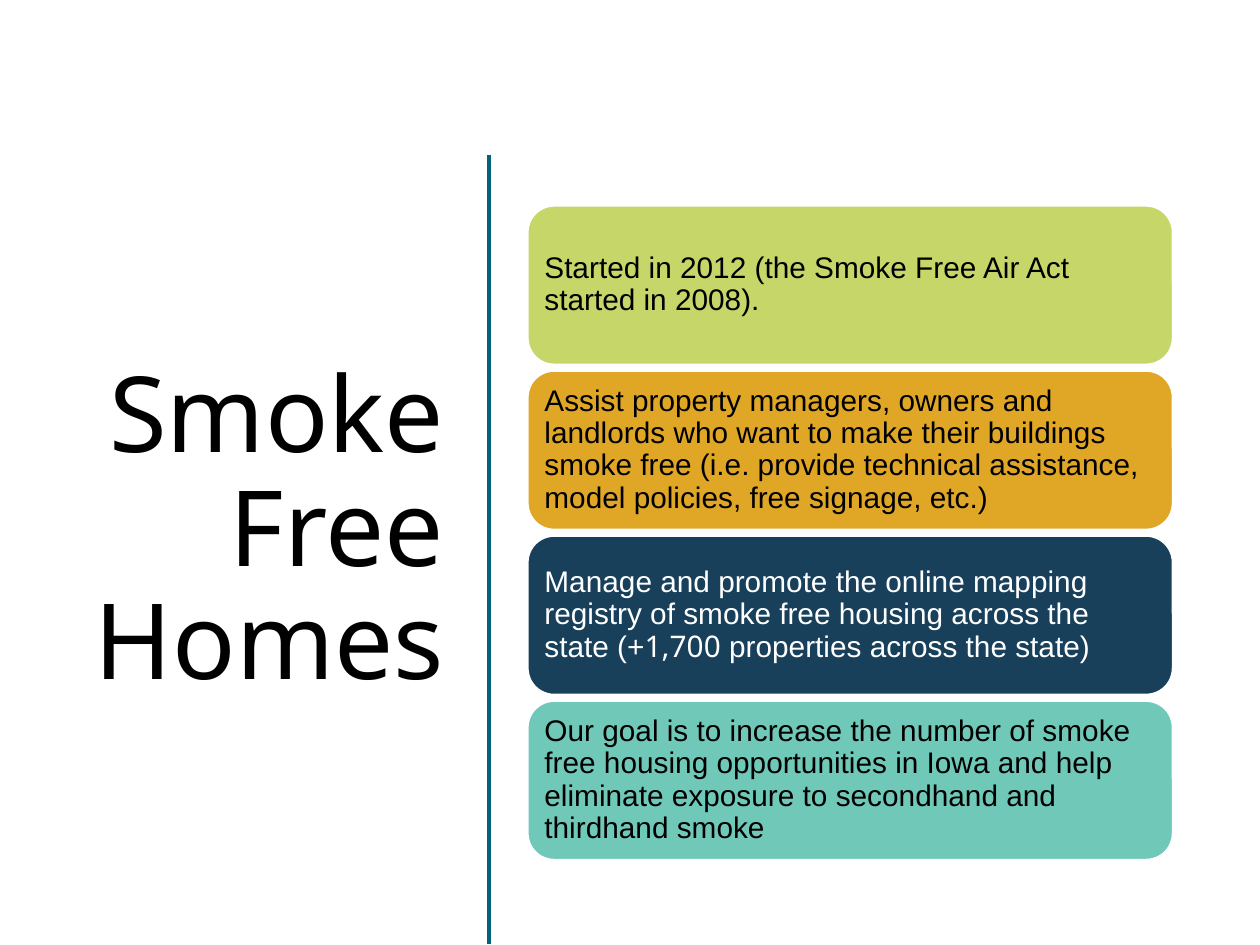
from dataclasses import dataclass

from lxml import etree
from pptx import Presentation
from pptx import util as u
from pptx.dml.color import RGBColor
from pptx.enum import shapes, text
from pptx.oxml.ns import qn


@dataclass(frozen=True)
class Theme:
    black: RGBColor = RGBColor.from_string("000000")
    white: RGBColor = RGBColor.from_string("FFFFFF")
    teal: RGBColor = RGBColor.from_string("04627A")
    lime: RGBColor = RGBColor.from_string("C6D668")
    amber: RGBColor = RGBColor.from_string("E0A626")
    navy: RGBColor = RGBColor.from_string("18405B")
    mint: RGBColor = RGBColor.from_string("70C8B8")
    title_font: str = "Noto Sans"
    body_font: str = "Arial"
    title_size: u.Pt = u.Pt(60)
    body_size: u.Pt = u.Pt(17)


THEME = Theme()

# Each card: fill, text colour, runs as (wording, font)
CARDS = [
    (THEME.lime, THEME.black, [
        ("Started in 2012 (the Smoke Free Air Act started in 2008).", THEME.body_font)]),
    (THEME.amber, THEME.black, [
        ("Assist property managers, owners and landlords who want to make their "
         "buildings smoke free (i.e. provide technical assistance, model policies, "
         "free signage, etc.)", THEME.body_font)]),
    (THEME.navy, THEME.white, [
        ("Manage and promote the online mapping registry of smoke free housing "
         "across the state (+", THEME.body_font),
        ("1,700", THEME.title_font),
        (" properties across the state)", THEME.body_font)]),
    (THEME.mint, THEME.black, [
        ("Our goal is to increase the number of smoke free housing opportunities in "
         "Iowa and help eliminate exposure to secondhand and thirdhand smoke",
         THEME.body_font)]),
]


def place_title(slide, left, top, width, height):
    title = slide.shapes.title
    title.left, title.top, title.width, title.height = left, top, width, height
    frame = title.text_frame
    frame.text = "Smoke Free Homes"
    frame.word_wrap = True
    frame.auto_size = text.MSO_AUTO_SIZE.NONE
    frame.vertical_anchor = text.MSO_ANCHOR.MIDDLE
    paragraph = frame.paragraphs[0]
    paragraph.alignment = text.PP_ALIGN.RIGHT
    paragraph.line_spacing = 0.9
    paragraph.font.name = THEME.title_font
    paragraph.font.size = THEME.title_size
    paragraph.font.color.rgb = THEME.black


def draw_divider(slide, left, top, height):
    divider = slide.shapes.add_connector(
        shapes.MSO_CONNECTOR.STRAIGHT, left, top, left, top + height)
    divider.line.color.rgb = THEME.teal
    divider.line.width = u.Pt(2)
    etree.SubElement(divider.element.spPr, qn("a:effectLst"))


def draw_card(slide, left, top, width, height, fill, color, runs):
    card = slide.shapes.add_shape(
        shapes.MSO_SHAPE.ROUNDED_RECTANGLE, left, top, width, height)
    card.shadow.inherit = False
    card.fill.solid()
    card.fill.fore_color.rgb = fill
    card.line.color.rgb = THEME.white
    card.line.width = u.Pt(1)

    frame = card.text_frame
    frame.word_wrap = True
    frame.vertical_anchor = text.MSO_ANCHOR.MIDDLE
    frame.margin_left = frame.margin_right = u.Cm(0.18)
    frame.margin_top = frame.margin_bottom = u.Cm(0.18)
    paragraph = frame.paragraphs[0]
    paragraph.alignment = text.PP_ALIGN.LEFT
    paragraph.line_spacing = 0.9
    paragraph.font.size = THEME.body_size
    paragraph.font.color.rgb = color
    for wording, font_name in runs:
        run = paragraph.add_run()
        run.text = wording
        run.font.name = font_name


def draw_card_stack(slide, left, top, width, height, gap):
    card_height = (height - gap * (len(CARDS) - 1)) // len(CARDS)
    for index, (fill, color, runs) in enumerate(CARDS):
        card_top = top + index * (card_height + gap)
        draw_card(slide, left, card_top, width, card_height, fill, color, runs)


def main():
    presentation = Presentation()
    presentation.slide_width, presentation.slide_height = u.Cm(25.4), u.Cm(19.05)
    slide = presentation.slides.add_slide(presentation.slide_layouts[5])

    # Left: title; centre: divider; right: four cards
    place_title(slide, u.Cm(1), u.Cm(2.97), u.Cm(8.2), u.Cm(15.52))
    draw_divider(slide, u.Cm(9.86), u.Cm(3.12), u.Cm(15.9))
    draw_card_stack(slide, u.Cm(10.64), u.Cm(4.15), u.Cm(13), u.Cm(13.18), u.Cm(0.13))
    presentation.save("out.pptx")


if __name__ == "__main__":
    main()
